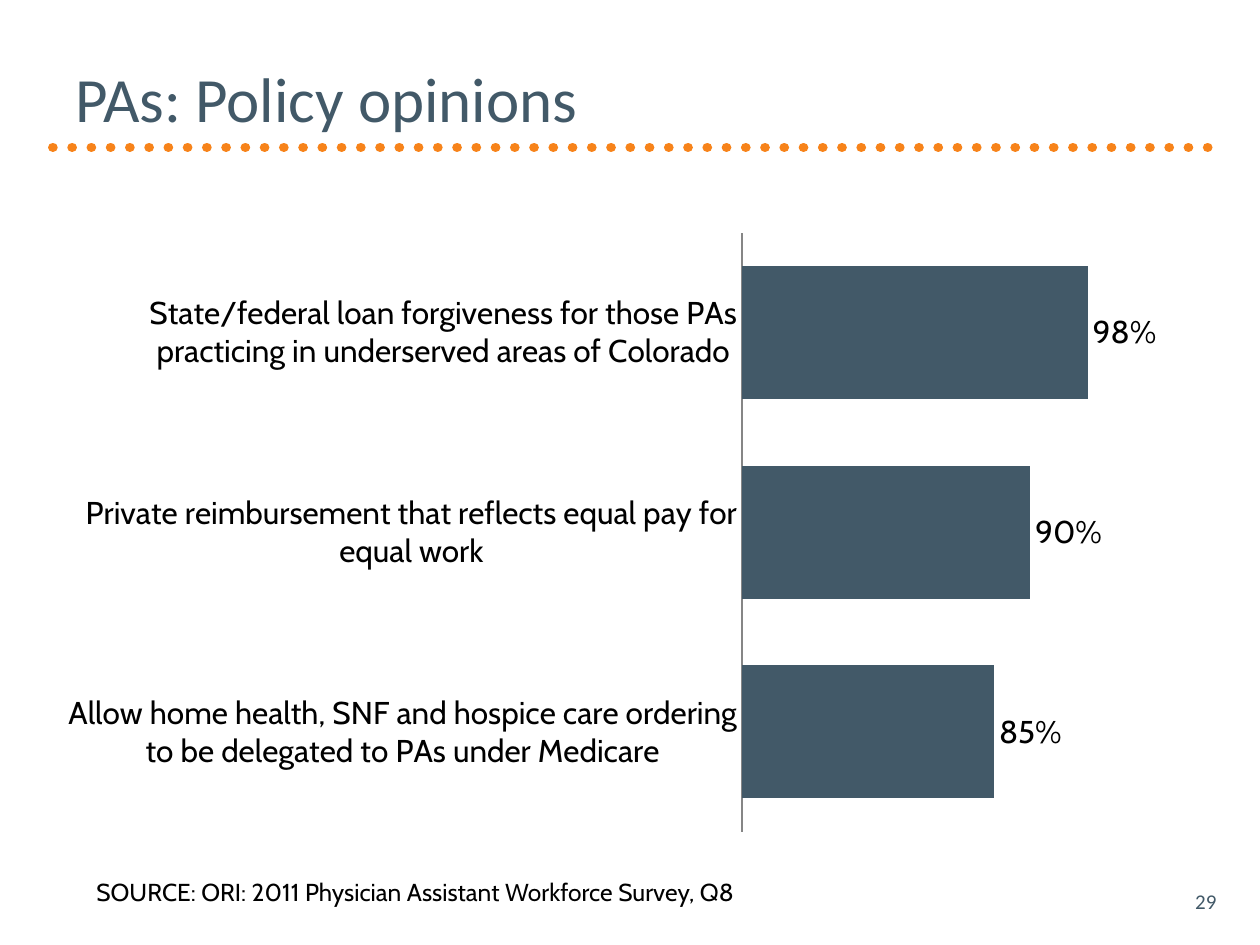
from dataclasses import dataclass

from pptx import Presentation
from pptx.chart import data
from pptx.dml.color import RGBColor
from pptx.enum import chart as charts, dml, shapes, text
from pptx.oxml.ns import qn
from pptx.util import Pt
from lxml import etree


@dataclass(frozen=True)
class Theme:
    slate: RGBColor = RGBColor(0x42, 0x59, 0x68)
    orange: RGBColor = RGBColor(0xF7, 0x83, 0x1A)
    black: RGBColor = RGBColor(0, 0, 0)
    gray: RGBColor = RGBColor(0x86, 0x86, 0x86)
    heading_font: str = "Calibri"
    body_font: str = "Cabin"
    title_size: int = 36
    chart_size: int = 18
    source_size: int = 14
    number_size: int = 12


class SlideBuilder:
    def __init__(self, page, theme):
        self.page = page
        self.theme = theme

    def style(self, font, name, size, color):
        font.name = name
        font.size = Pt(size)
        font.color.rgb = color

    def label(self, words, bounds, name, size, color,
              align=text.PP_ALIGN.LEFT, anchor=text.MSO_ANCHOR.MIDDLE):
        box = self.page.shapes.add_textbox(*map(Pt, bounds))
        frame = box.text_frame
        frame.text = words
        frame.word_wrap = True
        frame.vertical_anchor = anchor
        para = frame.paragraphs[0]
        para.alignment = align
        for span in para.runs:
            self.style(span.font, name, size, color)

    def dotted_rule(self, left, right, top, width):
        rule = self.page.shapes.add_connector(
            shapes.MSO_CONNECTOR.STRAIGHT, Pt(left), Pt(top), Pt(right), Pt(top))
        rule.line.color.rgb = self.theme.orange
        rule.line.width = Pt(width)
        rule.line.dash_style = dml.MSO_LINE.ROUND_DOT
        properties = rule.element.spPr
        properties.find(qn("a:ln")).set("cap", "rnd")
        etree.SubElement(properties, qn("a:effectLst"))

    def bar_chart(self, opinions, bounds):
        theme = self.theme
        chart_data = data.CategoryChartData(number_format="0%")
        chart_data.categories = list(opinions)
        chart_data.add_series("Series 1", list(opinions.values()))
        chart = self.page.shapes.add_chart(
            charts.XL_CHART_TYPE.BAR_CLUSTERED, *map(Pt, bounds), chart_data).chart
        self.style(chart.font, theme.body_font, theme.chart_size, theme.black)
        chart.has_legend = False
        chart.has_title = False

        # Axes
        categories = chart.category_axis
        categories.reverse_order = True
        categories.major_tick_mark = charts.XL_TICK_MARK.NONE
        categories.format.line.color.rgb = theme.gray
        values = chart.value_axis
        values.visible = False
        values.has_major_gridlines = False
        values.minimum_scale = 0.5
        values.maximum_scale = 1.1

        # Bars and their labels
        plot = chart.plots[0]
        plot.gap_width = 50
        plot.overlap = -25
        plot.vary_by_categories = False
        fill = plot.series[0].format.fill
        fill.solid()
        fill.fore_color.rgb = theme.slate
        plot.has_data_labels = True
        labels = plot.data_labels
        labels.show_value = True
        labels.number_format = "0%"
        labels.number_format_is_linked = False
        labels.position = charts.XL_LABEL_POSITION.OUTSIDE_END


def main():
    deck = Presentation()
    deck.slide_width, deck.slide_height = Pt(720), Pt(540)
    theme = Theme()
    slide = SlideBuilder(deck.slides.add_slide(deck.slide_layouts[6]), theme)

    # Heading
    slide.dotted_rule(30.2, 696.2, 84.2, 5.5)
    slide.label("PAs: Policy opinions", (36, 21.6, 648, 68.4),
                theme.heading_font, theme.title_size, theme.slate)

    # Opinions
    slide.bar_chart({
        "State/federal loan forgiveness for those PAs practicing in "
        "underserved areas of Colorado": 0.98,
        "Private reimbursement that reflects equal pay for equal work": 0.90,
        "Allow home health, SNF and hospice care ordering to be delegated "
        "to PAs under Medicare": 0.85,
    }, (36, 126, 648, 356.4))

    # Footer
    slide.label("29", (534.2, 500.4, 168, 28.8),
                theme.heading_font, theme.number_size, theme.slate,
                align=text.PP_ALIGN.RIGHT)
    slide.label("SOURCE: ORI: 2011 Physician Assistant Workforce Survey, Q8",
                (48, 497.5, 396, 24.5),
                theme.body_font, theme.source_size, theme.black,
                anchor=text.MSO_ANCHOR.TOP)

    deck.save("out.pptx")


if __name__ == "__main__":
    main()
